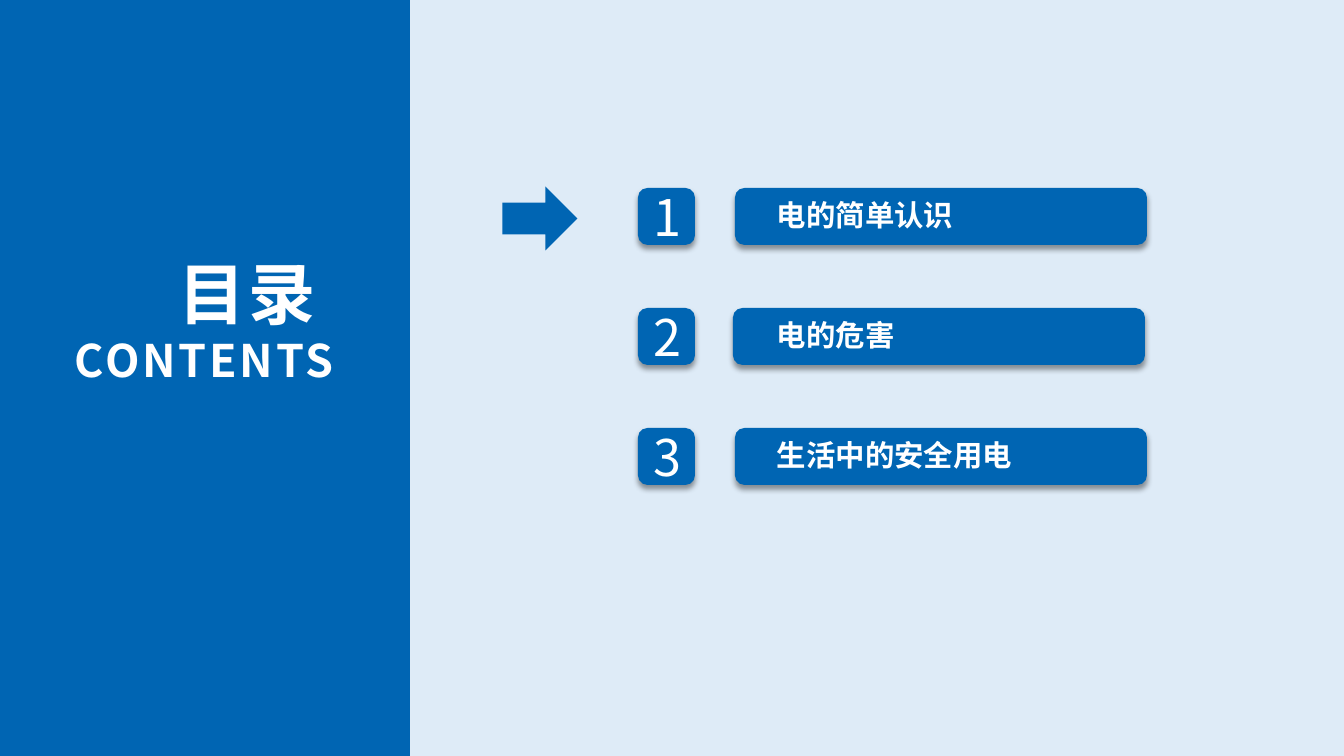
from lxml import etree
from pptx import Presentation
from pptx.dml.color import RGBColor
from pptx.enum.shapes import MSO_SHAPE as SHAPE
from pptx.enum.text import MSO_ANCHOR as ANCHOR, MSO_AUTO_SIZE as FIT, PP_ALIGN as ALIGN
from pptx.oxml.ns import qn
from pptx.util import Pt

TITLE = [("目录 ", 48), ("CONTENTS", 32)]
# heading, left of its bar, width of its label
TOPICS = [
    ("电的简单认识", 735, 337),
    ("电的危害", 733, 365),
    ("生活中的安全用电", 735, 365),
]
COLORS = {"blue": "0065B3", "pale": "DEEBF7", "white": "FFFFFF", "black": "000000"}
FONT = "Noto Sans CJK SC"
PX = 914400 / 100.8
WIDE, HIGH = 1344, 756
TOP, STEP, SIDE = 188, 120, 57


def px(*sizes):
    return [round(size * PX) for size in sizes]


def color(name):
    return RGBColor.from_string(COLORS[name])


def add_block(shapes, kind, box, raised=False):
    """Add a plain blue shape, with a soft shadow below it if raised."""
    block = shapes.add_shape(kind, *px(*box))
    block.fill.solid()
    block.fill.fore_color.rgb = color("blue")
    block.line.fill.background()
    block.shadow.inherit = False
    if raised:
        effects = block._element.spPr.find(qn("a:effectLst"))
        shade = etree.SubElement(effects, qn("a:outerShdw"), blurRad=str(Pt(4)),
                                 dist=str(Pt(3)), dir="5400000", algn="t", rotWithShape="0")
        tint = etree.SubElement(shade, qn("a:srgbClr"), val=COLORS["black"])
        etree.SubElement(tint, qn("a:alpha"), val="40000")
    return block


def set_frame(frame, side, edge, anchor, fit):
    frame.margin_left, frame.margin_right = px(side, side)
    frame.margin_top, frame.margin_bottom = px(edge, edge)
    frame.vertical_anchor = anchor
    frame.auto_size = fit
    frame.word_wrap = True


def add_run(para, text, size, bold=False, align=ALIGN.LEFT):
    para.alignment = align
    run = para.add_run()
    run.text = text
    font = run.font
    font.size, font.bold, font.name = Pt(size), bold, FONT
    font.color.rgb = color("white")
    etree.SubElement(run._r.rPr, qn("a:ea"), typeface=FONT)
    return run


def add_title(slide):
    title = slide.shapes.title
    title.left, title.top, title.width, title.height = px(37, 245, 310, 149)
    frame = title.text_frame
    set_frame(frame, 13, 7, ANCHOR.TOP, FIT.NONE)
    for i, (text, size) in enumerate(TITLE):
        para = frame.add_paragraph() if i else frame.paragraphs[0]
        para.line_spacing = 1.0
        para.space_before = Pt(0)
        run = add_run(para, text, size, True, ALIGN.RIGHT)
        run._r.rPr.set("spc", "200")


def add_topic(slide, i, text, left, width):
    top = TOP + i * STEP
    badge = add_block(slide.shapes, SHAPE.ROUNDED_RECTANGLE, (638, top, SIDE, SIDE), True)
    set_frame(badge.text_frame, 13, 7, ANCHOR.MIDDLE, FIT.NONE)
    add_run(badge.text_frame.paragraphs[0], str(i + 1), 36, align=ALIGN.CENTER)

    group = slide.shapes.add_group_shape()
    add_block(group.shapes, SHAPE.ROUNDED_RECTANGLE, (left, top, 412, SIDE), True)
    label = group.shapes.add_textbox(*px(767, top + 4, width, 45))
    set_frame(label.text_frame, 10, 5, ANCHOR.TOP, FIT.SHAPE_TO_FIT_TEXT)
    add_run(label.text_frame.paragraphs[0], text, 21, True)


def main():
    deck = Presentation()
    deck.slide_width, deck.slide_height = px(WIDE, HIGH)
    slide = deck.slides.add_slide(deck.slide_layouts[5])
    slide.background.fill.solid()
    slide.background.fill.fore_color.rgb = color("pale")

    panel = add_block(slide.shapes, SHAPE.RECTANGLE, (0, 0, 410, HIGH))
    slide.shapes.title._element.addprevious(panel._element)
    add_title(slide)
    for i, topic in enumerate(TOPICS):
        add_topic(slide, i, *topic)
    arrow = add_block(slide.shapes, SHAPE.DOWN_ARROW, (508, 181, 64, 75))
    arrow.rotation = 270
    deck.save("out.pptx")


if __name__ == "__main__":
    main()
